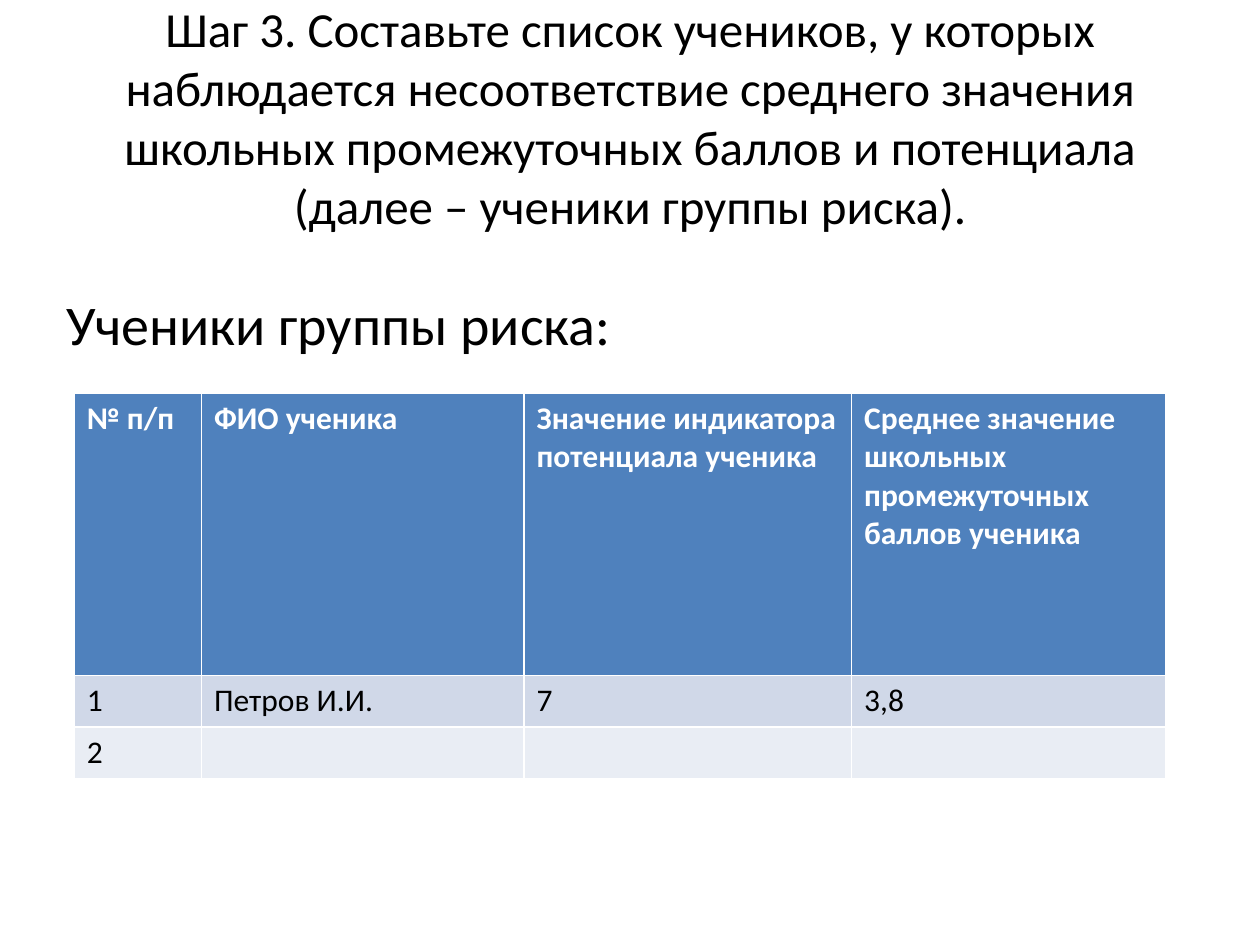
from pptx import Presentation
from pptx.dml.color import RGBColor
from pptx.enum.text import MSO_ANCHOR as Anchor, MSO_AUTO_SIZE as AutoSize, PP_ALIGN as Align
from pptx.oxml.xmlchemy import OxmlElement
from pptx.util import Pt

BLACK = RGBColor(0x00, 0x00, 0x00)
WHITE = RGBColor(0xFF, 0xFF, 0xFF)
HEADER_BLUE = RGBColor(0x4F, 0x81, 0xBD)
BAND_COLOURS = (RGBColor(0xD0, 0xD8, 0xE8), RGBColor(0xE9, 0xED, 0xF4))

FONT = "Calibri"
TITLE = (
    "Шаг 3. Составьте список учеников, у которых наблюдается несоответствие "
    "среднего значения школьных промежуточных баллов и потенциала "
    "(далее – ученики группы риска)."
)
COLUMN_WIDTHS = (72.7, 184.3, 187.2, 179.3)
ROW_HEIGHTS = (161.3, 29.5, 29.5)
STUDENTS = (
    ("№ п/п", "ФИО ученика", "Значение индикатора потенциала ученика",
     "Среднее значение школьных промежуточных баллов ученика"),
    ("1", "Петров И.И.", "7", "3,8"),
    ("2", "", "", ""),
)


def write_text(text_frame, text, size=18, colour=BLACK, bold=False, align=Align.LEFT):
    """Fill a text frame with one formatted paragraph and return it."""
    paragraph = text_frame.paragraphs[0]
    paragraph.alignment = align
    paragraph.font.size = Pt(size)
    if text:
        run = paragraph.add_run()
        run.text = text
        run.font.name = FONT
        run.font.size = Pt(size)
        run.font.bold = bold
        run.font.color.rgb = colour
    return paragraph


def place(shape, left, top, width, height, anchor):
    """Move a placeholder and fix its text layout."""
    shape.left, shape.top = Pt(left), Pt(top)
    shape.width, shape.height = Pt(width), Pt(height)
    shape.text_frame.word_wrap = True
    shape.text_frame.auto_size = AutoSize.NONE
    shape.text_frame.vertical_anchor = anchor


def remove_bullet(paragraph):
    properties = paragraph._p.get_or_add_pPr()
    properties.set("marL", "0")
    properties.set("indent", "0")
    properties.append(OxmlElement("a:buNone"))


def add_student_table(slide, left, top):
    frame = slide.shapes.add_table(
        len(STUDENTS), len(COLUMN_WIDTHS), Pt(left), Pt(top),
        Pt(sum(COLUMN_WIDTHS)), Pt(sum(ROW_HEIGHTS)))
    table = frame.table
    for column, width in zip(table.columns, COLUMN_WIDTHS):
        column.width = Pt(width)
    for index, (row, height, values) in enumerate(zip(table.rows, ROW_HEIGHTS, STUDENTS)):
        row.height = Pt(height)
        is_header = index == 0
        for cell, value in zip(row.cells, values):
            cell.fill.solid()
            cell.fill.fore_color.rgb = HEADER_BLUE if is_header else BAND_COLOURS[(index - 1) % 2]
            write_text(cell.text_frame, value, bold=is_header,
                       colour=WHITE if is_header else BLACK)


def main():
    presentation = Presentation()
    presentation.slide_width, presentation.slide_height = Pt(720), Pt(540)
    slide = presentation.slides.add_slide(presentation.slide_layouts[1])

    # Title
    title = slide.shapes.title
    place(title, 36, 21.6, 648, 90, Anchor.MIDDLE)
    write_text(title.text_frame, TITLE, size=28, align=Align.CENTER)

    # Lead-in line
    body = slide.placeholders[1]
    place(body, 31, 162, 648, 356.4, Anchor.TOP)
    remove_bullet(write_text(body.text_frame, "Ученики группы риска:", size=32))

    # Students at risk
    add_student_table(slide, 42.5, 224.6)

    presentation.save("out.pptx")


if __name__ == "__main__":
    main()
